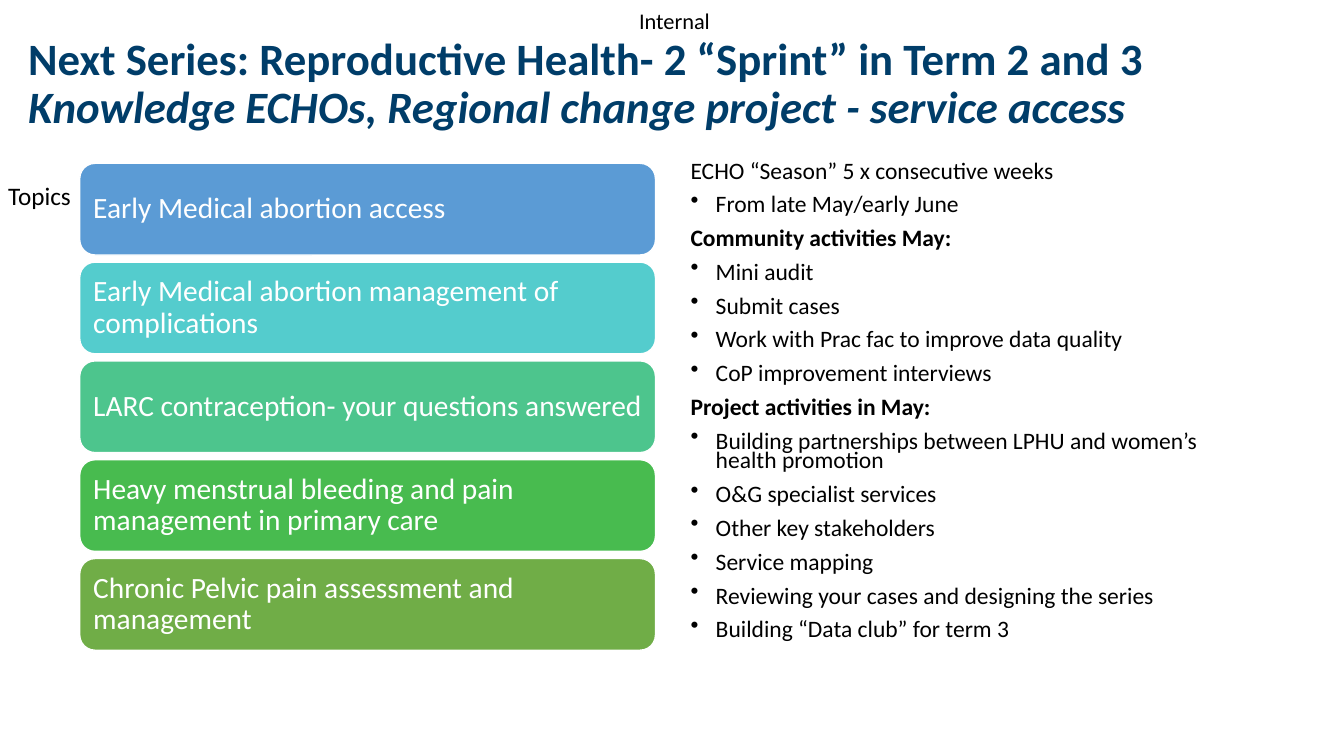
import pptx
import pptx.dml.color
import pptx.enum.shapes
import pptx.enum.text
import pptx.util
from dataclasses import dataclass


@dataclass(frozen=True)
class Theme:
    font: str = "Calibri"
    navy: str = "003D69"
    black: str = "000000"
    white: str = "FFFFFF"
    title: float = 32
    topic: float = 21
    label: float = 18
    body: float = 16.8
    marking: float = 16


theme = Theme()
Inches, Pt = pptx.util.Inches, pptx.util.Pt
rgb = pptx.dml.color.RGBColor.from_string
MIDDLE = pptx.enum.text.MSO_ANCHOR.MIDDLE
TOP = pptx.enum.text.MSO_ANCHOR.TOP

deck = pptx.Presentation()
deck.slide_width, deck.slide_height = Inches(13.33), Inches(7.5)
page = deck.slides.add_slide(deck.slide_layouts[6])


def area(left, top, width, height):
    """Turn percentages of the slide into a position and size."""
    across, down = deck.slide_width / 100, deck.slide_height / 100
    return int(left * across), int(top * down), int(width * across), int(height * down)


def write(shape, lines, size, color=theme.black, inset=(0.1, 0.05), anchor=TOP,
          spacing=None, before=0, align=pptx.enum.text.PP_ALIGN.LEFT):
    """Fill a shape with (text, style) lines; style is any of bold, italic, bullet, break."""
    frame = shape.text_frame
    frame.word_wrap = True
    frame.vertical_anchor = anchor
    frame.margin_left = frame.margin_right = Inches(inset[0])
    frame.margin_top = frame.margin_bottom = Inches(inset[1])
    para = frame.paragraphs[0]
    for number, (text, style) in enumerate(lines):
        if "break" in style:
            para.add_line_break()
        elif number:
            para = frame.add_paragraph()
            para.space_before = Pt(before)
        if "bullet" in style:
            properties = para._p.get_or_add_pPr()
            properties.set("marL", str(Inches(0.25)))
            properties.set("indent", str(-Inches(0.25)))
            bullet = pptx.oxml.xmlchemy.OxmlElement("a:buChar")
            bullet.set("char", "•")
            properties.append(bullet)
        para.alignment = align
        para.line_spacing = spacing
        span = para.add_run()
        span.text = text
        span.font.name, span.font.size = theme.font, Pt(size)
        span.font.bold, span.font.italic = "bold" in style, "italic" in style
        span.font.color.rgb = rgb(color)


marking = page.shapes.add_textbox(*area(47.34, 0.93, 5.7, 3.6))
write(marking, [("Internal", "")], theme.marking, inset=(0, 0),
      align=pptx.enum.text.PP_ALIGN.CENTER)

title = page.shapes.add_textbox(*area(2.1, 4.27, 87.55, 14))
write(title, [
    ("Next Series: Reproductive Health- 2 “Sprint” in Term 2 and 3", "bold"),
    ("Knowledge ECHOs, Regional change project - service access", "bold italic break"),
], theme.title, theme.navy, inset=(0, 0.04), spacing=0.9)

topics = [
    ("Early Medical abortion access", "5B9BD5"),
    ("Early Medical abortion management of complications", "54CCCD"),
    ("LARC contraception- your questions answered", "4DC58D"),
    ("Heavy menstrual bleeding and pain management in primary care", "48BB4F"),
    ("Chronic Pelvic pain assessment and management", "70AD47"),
]
for row, (topic, color) in enumerate(topics):
    card = page.shapes.add_shape(pptx.enum.shapes.MSO_SHAPE.ROUNDED_RECTANGLE,
                                 *area(5.93, 21.6 + 13.07 * row, 42.84, 12.13))
    card.shadow.inherit = False
    card.fill.solid()
    card.fill.fore_color.rgb = rgb(color)
    card.line.color.rgb = rgb(theme.white)
    card.line.width = Pt(1)
    write(card, [(topic, "")], theme.topic, theme.white, inset=(0.09, 0.09),
          anchor=MIDDLE, spacing=0.9)

plan = page.shapes.add_textbox(*area(50.64, 20.93, 42.84, 65.6))
write(plan, [
    ("ECHO “Season” 5 x consecutive weeks", ""),
    ("From late May/early June", "bullet"),
    ("Community activities May:", "bold"),
    ("Mini audit", "bullet"),
    ("Submit cases", "bullet"),
    ("Work with Prac fac to improve data quality", "bullet"),
    ("CoP improvement interviews", "bullet"),
    ("Project activities in May:", "bold"),
    ("Building partnerships between LPHU and women’s health promotion", "bullet"),
    ("O&G specialist services", "bullet"),
    ("Other key stakeholders", "bullet"),
    ("Service mapping", "bullet"),
    ("Reviewing your cases and designing the series", "bullet"),
    ("Building “Data club” for term 3", "bullet"),
], theme.body, spacing=0.7, before=10)

label = page.shapes.add_textbox(*area(0, 23.2, 10, 5.33))
write(label, [("Topics", "")], theme.label, inset=(0.08, 0.05))

deck.save("out.pptx")
